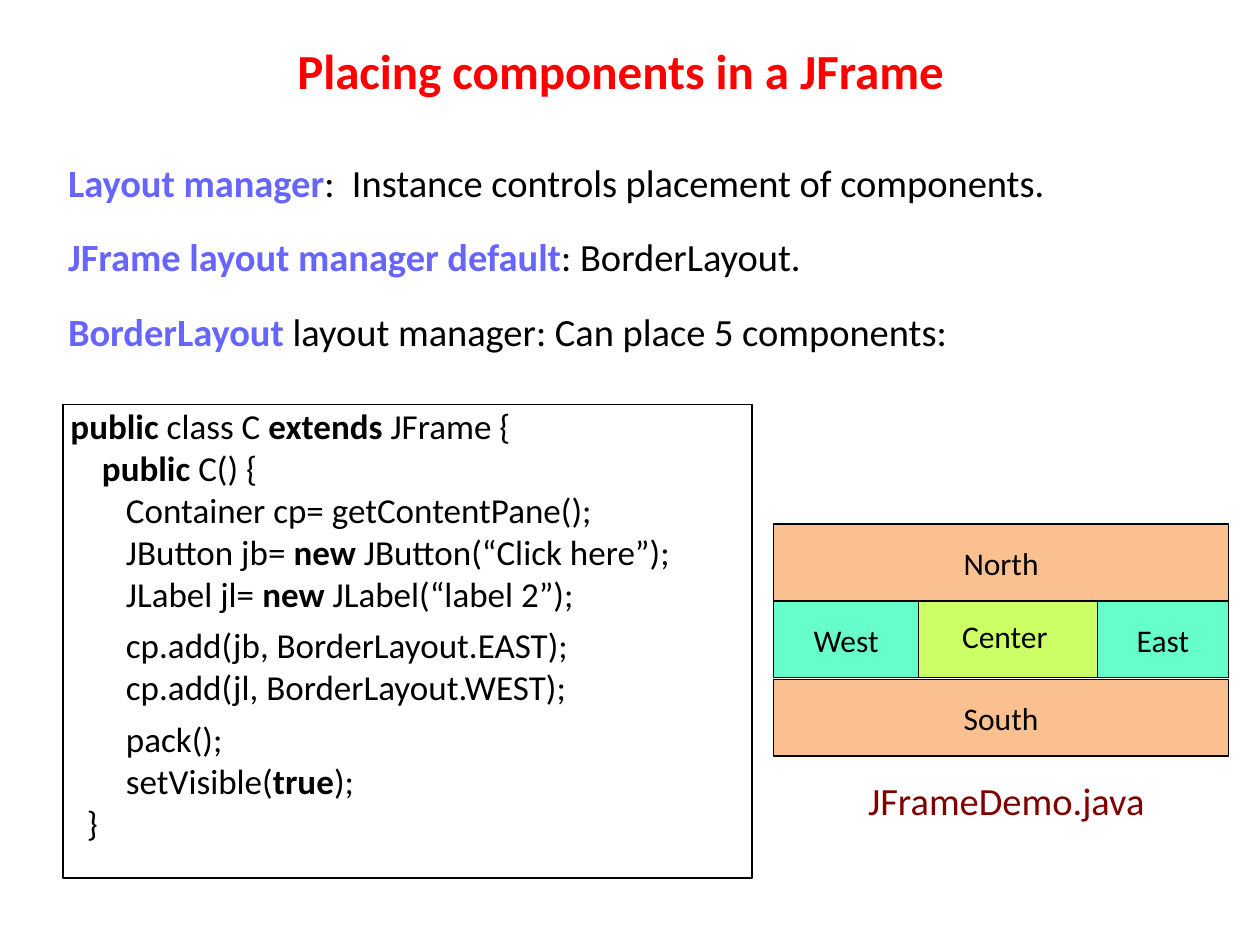
from lxml.etree import SubElement
from pptx import Presentation
from pptx.dml.color import RGBColor
from pptx.enum.shapes import MSO_SHAPE
from pptx.enum.text import MSO_ANCHOR, MSO_AUTO_SIZE, PP_ALIGN
from pptx.oxml.ns import qn
from pptx.util import Inches, Pt

COLORS = {
    "black": "000000",
    "title": "FF0000",
    "term": "6666FF",
    "file": "800000",
    "edge": "FAC090",
    "side": "66FFCC",
    "center": "CCFF66",
}


class Deck:
    font = "Calibri"

    def __init__(self, slide):
        self.slide = slide

    def place(self, shape, box):
        shape.left, shape.top, shape.width, shape.height = map(Inches, box)

    def frame(self, shape, inset=(0, 0), anchor=MSO_ANCHOR.TOP, wrap=True):
        frame = shape.text_frame
        frame.auto_size = MSO_AUTO_SIZE.NONE
        frame.word_wrap = wrap
        frame.vertical_anchor = anchor
        frame.margin_left = frame.margin_right = Inches(inset[0])
        frame.margin_top = frame.margin_bottom = Inches(inset[1])
        return frame

    def style(self, para, size, color="black", align=PP_ALIGN.LEFT, before=0):
        para.font.name = self.font
        para.font.size = Pt(size)
        para.font.color.rgb = RGBColor.from_string(COLORS[color])
        para.alignment = align
        para.space_before = Pt(before)

    def rich(self, para, text, accent="black"):
        for i, part in enumerate(text.split("*")):
            if part:
                run = para.add_run()
                run.text = part
                run.font.bold = i % 2 == 1
                if run.font.bold:
                    run.font.color.rgb = RGBColor.from_string(COLORS[accent])

    def paras(self, frame, count):
        return [frame.paragraphs[0]] + [frame.add_paragraph() for _ in range(count - 1)]

    def title(self, text, box):
        shape = self.slide.shapes.title
        self.place(shape, box)
        frame = self.frame(shape, (0.1, 0.05), MSO_ANCHOR.MIDDLE)
        frame.text = text
        para = frame.paragraphs[0]
        self.style(para, 28, "title", PP_ALIGN.CENTER)
        para.font.bold = True

    def body(self, lines, box):
        shape = self.slide.placeholders[1]
        self.place(shape, box)
        frame = self.frame(shape, (0.09, 0.04))
        for para, line in zip(self.paras(frame, len(lines)), lines):
            props = para._p.get_or_add_pPr()
            props.set("marL", "0")
            props.set("indent", "0")
            SubElement(props, qn("a:buNone"))
            self.style(para, 22, before=16.2)
            self.rich(para, line, "term")

    def rect(self, box, fill=None):
        shape = self.slide.shapes.add_shape(MSO_SHAPE.RECTANGLE, *map(Inches, box))
        shape.shadow.inherit = False
        if fill:
            shape.fill.solid()
            shape.fill.fore_color.rgb = RGBColor.from_string(COLORS[fill])
        else:
            shape.fill.background()
        shape.line.color.rgb = RGBColor.from_string(COLORS["black"])
        shape.line.width = Pt(0.75)
        return shape

    def code(self, lines, box):
        frame = self.frame(self.rect(box))
        for para, (indent, before, line) in zip(self.paras(frame, len(lines)), lines):
            para._p.get_or_add_pPr().set("marL", str(Inches(indent)))
            self.style(para, 20, before=before)
            self.rich(para, line)

    def region(self, text, box, fill):
        frame = self.frame(self.rect(box, fill), anchor=MSO_ANCHOR.MIDDLE)
        if text:
            frame.text = text
            self.style(frame.paragraphs[0], 18, align=PP_ALIGN.CENTER)

    def label(self, text, box, size, color="black", align=PP_ALIGN.LEFT,
              inset=(0.09, 0.04), wrap=True):
        shape = self.slide.shapes.add_textbox(*map(Inches, box))
        frame = self.frame(shape, inset, wrap=wrap)
        frame.text = text
        self.style(frame.paragraphs[0], size, color, align)


def main():
    prs = Presentation()
    prs.slide_width, prs.slide_height = Inches(10), Inches(7.5)
    deck = Deck(prs.slides.add_slide(prs.slide_layouts[1]))

    deck.title("Placing components in a JFrame", (0.9, 0.18, 8.05, 0.75))
    deck.code([
        (0.06, 0, "*public* class C *extends* JFrame {"),
        (0.31, 0, "*public *C() {"),
        (0.5, 0, "Container cp= getContentPane();"),
        (0.5, 0, "JButton jb= *new *JButton(“Click here”);"),
        (0.5, 0, "JLabel jl= *new *JLabel(“label 2”);"),
        (0.5, 5.4, "cp.add(jb, BorderLayout.EAST);"),
        (0.5, 0, "cp.add(jl, BorderLayout.WEST);"),
        (0.5, 5.4, "pack();"),
        (0.5, 0, "setVisible(*true*);"),
        (0.19, 0, "}"),
    ], (0.5, 3.21, 5.47, 3.76))
    deck.body([
        "*Layout manager*:  Instance controls placement of components.",
        "*JFrame layout manager default*: BorderLayout.",
        "*BorderLayout* layout manager: Can place 5 components:",
    ], (0.45, 1.22, 8.9, 1.66))
    deck.label("JFrameDemo.java", (6.8, 6.13, 2.4, 0.46), 22, "file")

    left, high = 6.14, 0.61
    west, mid, east = 1.15, 1.42, 1.04
    full = west + mid + east
    deck.region("South", (left, 5.39, full, high), "edge")
    deck.region("East", (left + west + mid, 4.77, east, high), "side")
    deck.region("West", (left, 4.77, west, high), "side")
    deck.region("", (left + west, 4.77, mid, high), "center")
    deck.region("North", (left, 4.16, full, high), "edge")
    deck.label("Center", (7.51, 4.85, 0.93, 0.4), 18, align=PP_ALIGN.CENTER,
               inset=(0.1, 0.05), wrap=False)

    prs.save("out.pptx")


if __name__ == "__main__":
    main()
